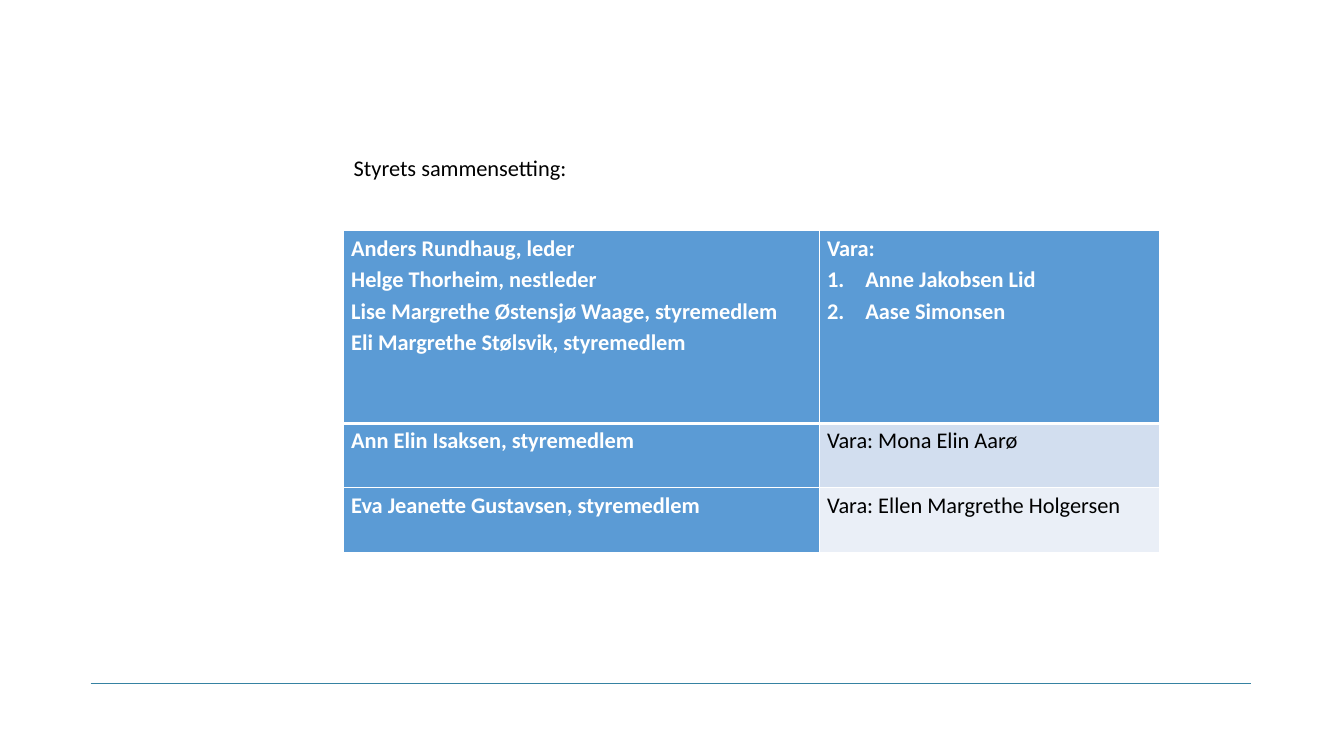
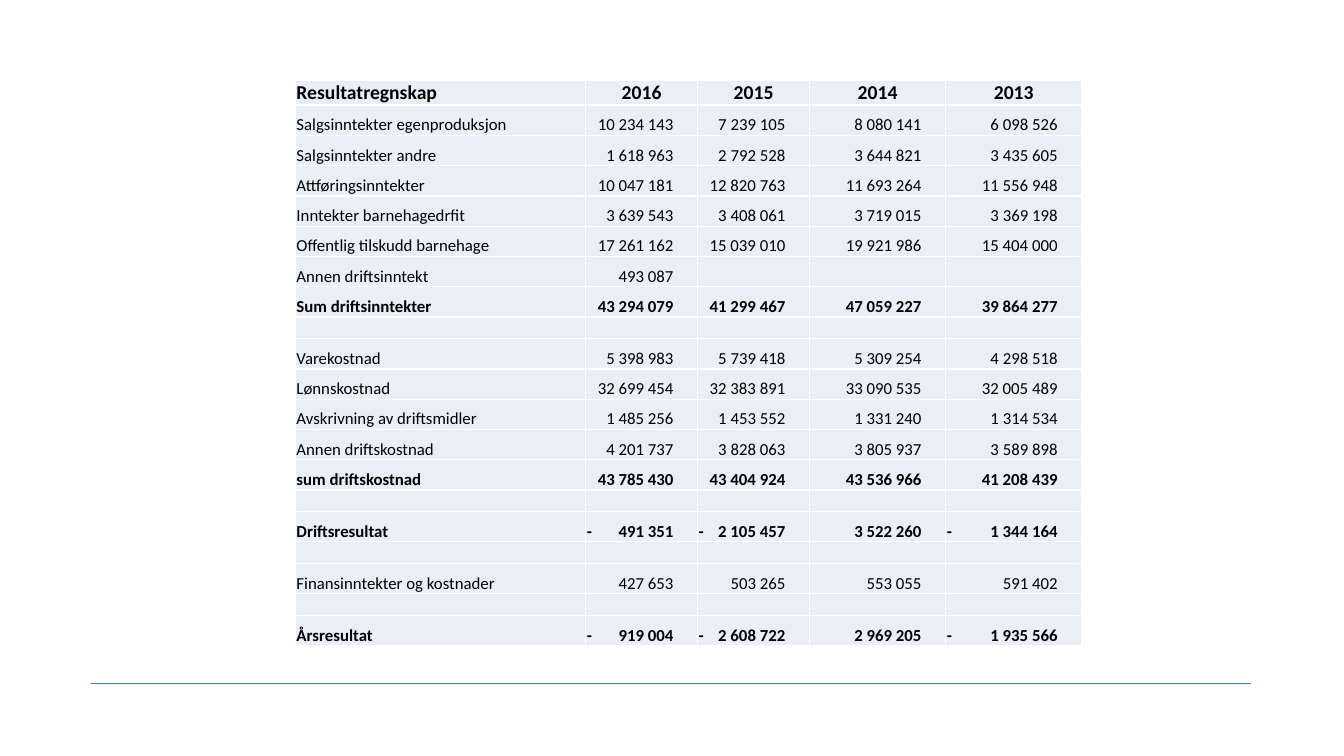
from lxml.etree import SubElement
from pptx import Presentation
from pptx.dml.color import RGBColor
from pptx.enum.shapes import MSO_CONNECTOR
from pptx.enum.text import MSO_ANCHOR, PP_ALIGN
from pptx.oxml.ns import qn
from pptx.util import Inches, Pt

BLACK = RGBColor(0x00, 0x00, 0x00)
WHITE = RGBColor(0xFF, 0xFF, 0xFF)
BLUE = RGBColor(0x5B, 0x9B, 0xD5)
MID_BLUE = RGBColor(0xD2, 0xDE, 0xEF)
PALE_BLUE = RGBColor(0xEA, 0xEF, 0xF7)
RULE_BLUE = RGBColor(0x36, 0x82, 0xA2)
FONT = "Calibri"

BOARD_FORMAT = {"margin_left": 0.55, "margin_right": 0.55, "margin_top": 0, "margin_bottom": 0}
RESULT_FORMAT = {"margin_left": 0.08, "margin_right": 0.08, "margin_top": 0.08, "margin_bottom": 0}
NUMBER_MARGIN = 1.8
LIST_INDENT = 2.85

BOARD_COLUMNS = [35.41, 25.28]
BOARD_ROWS = [25.47, 8.53, 8.53]
BOARD = [
    [["Anders Rundhaug, leder", "Helge Thorheim, nestleder",
      "Lise Margrethe Østensjø Waage, styremedlem", "Eli Margrethe Stølsvik, styremedlem"],
     ["Vara:", "Anne Jakobsen Lid", "Aase Simonsen"]],
    [["Ann Elin Isaksen, styremedlem"], ["Vara: Mona Elin Aarø"]],
    [["Eva Jeanette Gustavsen, styremedlem"], ["Vara: Ellen Margrethe Holgersen"]],
]
BOARD_FILLS = [[BLUE, BLUE], [BLUE, MID_BLUE], [BLUE, PALE_BLUE]]

RESULT_COLUMNS = [21.6, 8.33, 8.33, 10.13, 10.13]
HEADER_ROW, FIGURE_ROW, GAP_ROW = 3.2, 4.01, 2.77
GAP = [""] * 5
BOLD_ROWS = {"Resultatregnskap", "Sum driftsinntekter", "sum driftskostnad",
             "Driftsresultat", "Årsresultat"}
RESULT = [
    ["Resultatregnskap", "2016", "2015", "2014", "2013"],
    ["Salgsinntekter egenproduksjon", "10 234 143", "7 239 105", "8 080 141", "6 098 526"],
    ["Salgsinntekter andre", "1 618 963", "2 792 528", "3 644 821", "3 435 605"],
    ["Attføringsinntekter", "10 047 181", "12 820 763", "11 693 264", "11 556 948"],
    ["Inntekter barnehagedrfit", "3 639 543", "3 408 061", "3 719 015", "3 369 198"],
    ["Offentlig tilskudd barnehage", "17 261 162", "15 039 010", "19 921 986", "15 404 000"],
    ["Annen driftsinntekt", "493 087", "", "", ""],
    ["Sum driftsinntekter", "43 294 079", "41 299 467", "47 059 227", "39 864 277"],
    GAP,
    ["Varekostnad", "5 398 983", "5 739 418", "5 309 254", "4 298 518"],
    ["Lønnskostnad", "32 699 454", "32 383 891", "33 090 535", "32 005 489"],
    ["Avskrivning av driftsmidler", "1 485 256", "1 453 552", "1 331 240", "1 314 534"],
    ["Annen driftskostnad", "4 201 737", "3 828 063", "3 805 937", "3 589 898"],
    ["sum driftskostnad", "43 785 430", "43 404 924", "43 536 966", "41 208 439"],
    GAP,
    ["Driftsresultat", "-\t491 351", "-\t2 105 457", "3 522 260", "-\t1 344 164"],
    GAP,
    ["Finansinntekter og kostnader", "427 653", "503 265", "553 055", "591 402"],
    GAP,
    ["Årsresultat", "-\t919 004", "-\t2 608 722", "2 969 205", "-\t1 935 566"],
]

deck = Presentation()
deck.slide_width, deck.slide_height = Inches(13.33), Inches(7.5)


def grid(columns, rows=0):
    return int(columns * deck.slide_width / 100), int(rows * deck.slide_height / 100)


def write(frame, lines, size, color, bold, **para_format):
    frame.word_wrap = True
    for index, line in enumerate(lines):
        para = frame.add_paragraph() if index else frame.paragraphs[0]
        for name, value in para_format.items():
            setattr(para, name, value)
        if not line:
            SubElement(para._p, qn("a:endParaRPr"), sz=str(size * 100))
            continue
        span = para.add_run()
        span.text = line
        for name, value in {"name": FONT, "size": Pt(size), "bold": bold}.items():
            setattr(span.font, name, value)
        span.font.color.rgb = color


board_slide, result_slide = [deck.slides.add_slide(deck.slide_layouts[6]) for _ in range(2)]
for slide in (board_slide, result_slide):
    rule = slide.shapes.add_connector(MSO_CONNECTOR.STRAIGHT, *grid(6.75, 90.4), *grid(93.1, 90.4))
    rule.line.color.rgb = RULE_BLUE
    rule.line.width = Pt(0.15)
    SubElement(rule._element.spPr, qn("a:effectLst"))

heading = board_slide.shapes.add_textbox(*grid(25.58, 20.13), *grid(32.26, 5.33))
write(heading.text_frame, ["Styrets sammensetting:"], 16, BLACK, False, line_spacing=0.9)

result_rows = [HEADER_ROW] + [FIGURE_ROW if row[0] else GAP_ROW for row in RESULT[1:]]
result_fills = [[PALE_BLUE] * len(RESULT_COLUMNS)] * len(RESULT)
tables = []
for slide, corner, columns, rows, fills, cell_format in (
    (board_slide, (25.58, 30.53), BOARD_COLUMNS, BOARD_ROWS, BOARD_FILLS, BOARD_FORMAT),
    (result_slide, (21.98, 10.6), RESULT_COLUMNS, result_rows, result_fills, RESULT_FORMAT),
):
    table = slide.shapes.add_table(len(rows), len(columns), *grid(*corner),
                                   *grid(sum(columns), sum(rows))).table
    table.first_row = table.horz_banding = False
    tables.append(table)
    for column, width in zip(table.columns, columns):
        column.width = grid(width)[0]
    for row, height, row_fills in zip(table.rows, rows, fills):
        row.height = grid(0, height)[1]
        for cell, color in zip(row.cells, row_fills):
            for name, value in cell_format.items():
                setattr(cell, name, grid(value)[0])
            for side in ("lnL", "lnR", "lnT", "lnB"):
                border = SubElement(cell._tc.get_or_add_tcPr(), qn(f"a:{side}"), w=str(Pt(1)))
                paint = SubElement(border, qn("a:solidFill"))
                SubElement(paint, qn("a:srgbClr"), val=str(WHITE))
            cell.fill.solid()
            cell.fill.fore_color.rgb = color

board_table, result_table = tables
for row, texts, fills in zip(board_table.rows, BOARD, BOARD_FILLS):
    for cell, lines, fill in zip(row.cells, texts, fills):
        on_blue = fill == BLUE
        write(cell.text_frame, lines, 16, WHITE if on_blue else BLACK, on_blue, line_spacing=1.15)

for column in range(len(BOARD_COLUMNS)):
    for row, side in ((0, "lnB"), (1, "lnT")):
        border = board_table.cell(row, column)._tc.tcPr.find(qn(f"a:{side}"))
        border.set("w", str(Pt(3)))

for para in board_table.cell(0, 1).text_frame.paragraphs[1:]:
    properties = para._p.get_or_add_pPr()
    indent = grid(LIST_INDENT)[0]
    properties.set("marL", str(indent))
    properties.set("indent", str(-indent))
    SubElement(properties, qn("a:buAutoNum"), type="arabicPeriod")

for row_index, texts in enumerate(RESULT):
    for column_index, text in enumerate(texts):
        cell = result_table.cell(row_index, column_index)
        cell.vertical_anchor = MSO_ANCHOR.BOTTOM
        alignment = PP_ALIGN.LEFT
        if column_index and row_index == 0:
            alignment = PP_ALIGN.CENTER
        elif column_index and "\t" not in text:
            alignment = PP_ALIGN.RIGHT
            cell.margin_right = grid(NUMBER_MARGIN)[0]
        write(cell.text_frame, [text], 12 if row_index else 14, BLACK,
              texts[0] in BOLD_ROWS, alignment=alignment)
        if "\t" in text:
            stop = RESULT_COLUMNS[column_index] - NUMBER_MARGIN - RESULT_FORMAT["margin_left"]
            properties = cell.text_frame.paragraphs[0]._p.get_or_add_pPr()
            tabs = SubElement(properties, qn("a:tabLst"))
            SubElement(tabs, qn("a:tab"), pos=str(grid(stop)[0]), algn="r")

deck.save("out.pptx")
